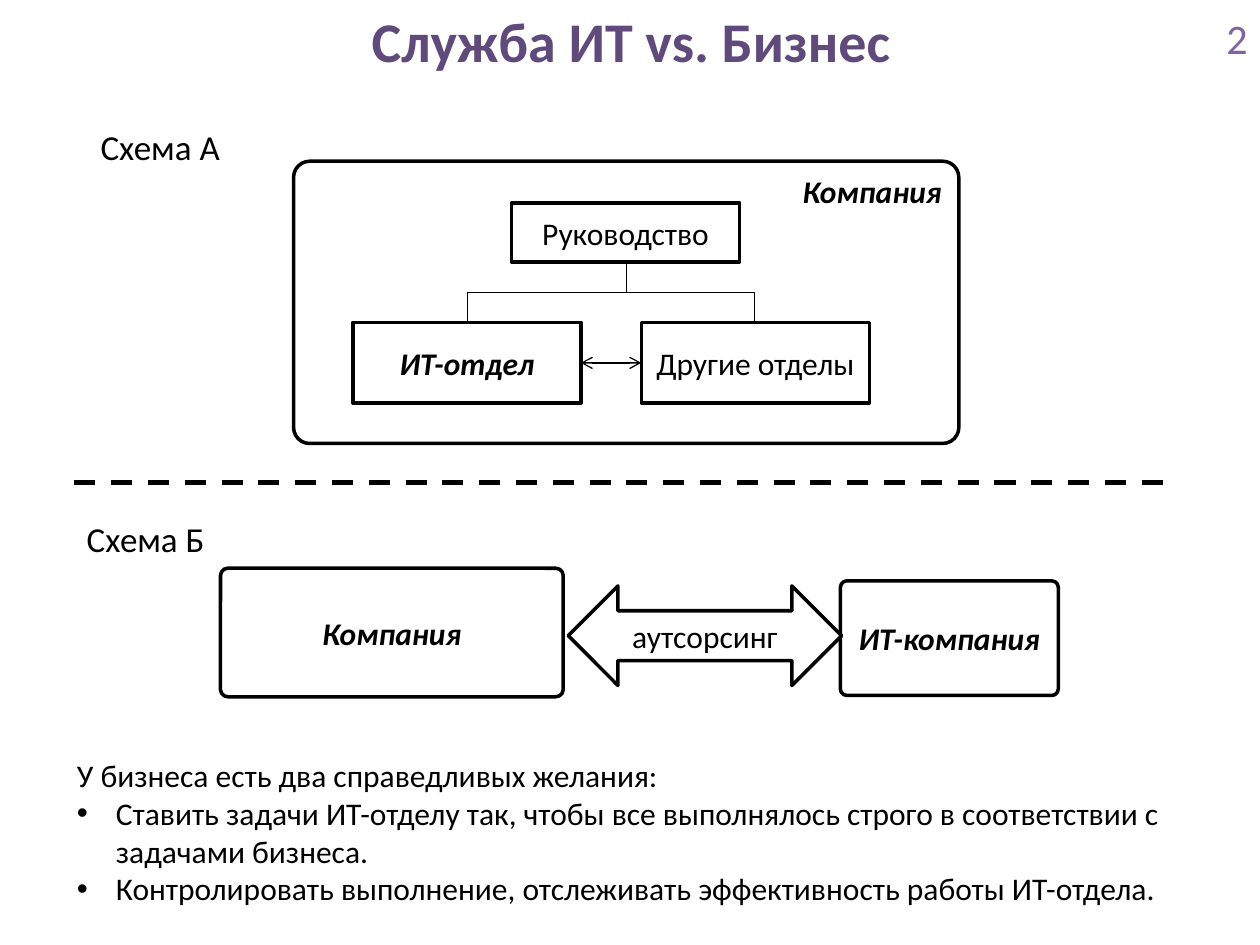
from lxml.etree import SubElement
from pptx import Presentation
from pptx.dml.color import RGBColor
from pptx.enum.dml import MSO_LINE
from pptx.enum.shapes import MSO_CONNECTOR, MSO_SHAPE
from pptx.enum.text import MSO_ANCHOR, MSO_AUTO_SIZE, PP_ALIGN
from pptx.oxml.ns import qn
from pptx.util import Inches, Pt

BLACK, WHITE, PURPLE, LILAC = "000000", "FFFFFF", "604A7B", "8064A2"
STRONG = {"bold": True, "italic": True}
ROUND, RECTANGLE = MSO_SHAPE.ROUNDED_RECTANGLE, MSO_SHAPE.RECTANGLE
MIDDLE, TOP = MSO_ANCHOR.MIDDLE, MSO_ANCHOR.TOP

TITLE = "Служба ИТ vs. Бизнес"
BOXES = [
    ("Компания", ROUND, (2.33, 1.28, 5.28, 2.24), STRONG, PP_ALIGN.RIGHT, TOP),
    ("Руководство", RECTANGLE, (4.06, 1.61, 1.81, 0.47), {}, PP_ALIGN.CENTER, MIDDLE),
    ("ИТ-отдел", RECTANGLE, (2.8, 2.56, 1.81, 0.64), STRONG, PP_ALIGN.CENTER, MIDDLE),
    ("Другие отделы", RECTANGLE, (5.09, 2.56, 1.81, 0.64), {}, PP_ALIGN.CENTER, MIDDLE),
    ("Компания", ROUND, (1.75, 4.51, 2.72, 1.02), STRONG, PP_ALIGN.CENTER, MIDDLE),
    ("ИТ-компания", ROUND, (6.67, 4.61, 1.73, 0.91), STRONG, PP_ALIGN.CENTER, MIDDLE),
    ("аутсорсинг", MSO_SHAPE.LEFT_RIGHT_ARROW, (4.51, 4.65, 2.17, 0.79), {}, PP_ALIGN.CENTER, MIDDLE),
]
MANAGER = (4.97, 2.08)
DEPARTMENTS = [(3.71, 2.56), (5.99, 2.56)]
LABELS = [
    ("Схема А", (0.7, 0.95, 1.16, 0.44), 20, BLACK, PP_ALIGN.LEFT, TOP),
    ("Схема Б", (0.59, 4.06, 1.16, 0.44), 20, BLACK, PP_ALIGN.LEFT, TOP),
    ("2", (9.25, 0, 0.75, 0.6), 24, LILAC, PP_ALIGN.RIGHT, MIDDLE),
]
WISHES = [
    ("У бизнеса есть два справедливых желания:", False),
    ("Ставить задачи ИТ-отделу так, чтобы все выполнялось строго в соответствии с задачами бизнеса.", True),
    ("Контролировать выполнение, отслеживать эффективность работы ИТ-отдела.", True),
]


def rgb(value):
    """Turn a hex string into a colour."""
    return RGBColor.from_string(value)


def place(shape, area):
    """Move and size a shape in inches."""
    for name, value in zip(("left", "top", "width", "height"), area):
        setattr(shape, name, Inches(value))


def write(paragraph, text, size, color=BLACK, align=PP_ALIGN.LEFT, **style):
    """Put one formatted run into a paragraph."""
    paragraph.alignment = align
    run = paragraph.add_run()
    run.text = text
    run.font.color.rgb = rgb(color)
    for name, value in {"name": "Calibri", "size": Pt(size), **style}.items():
        setattr(run.font, name, value)


def set_frame(shape, anchor, wrap=True):
    """Set the anchor and wrapping of a shape's text."""
    frame = shape.text_frame
    settings = {"word_wrap": wrap, "vertical_anchor": anchor, "auto_size": MSO_AUTO_SIZE.NONE}
    for name, value in settings.items():
        setattr(frame, name, value)
    return frame


def add_box(slide, text, kind, area, style, align, anchor):
    """Add an outlined white shape with text."""
    shape = slide.shapes.add_shape(kind, *map(Inches, area))
    shape.shadow.inherit = False
    shape.fill.solid()
    shape.fill.fore_color.rgb = rgb(WHITE)
    shape.line.color.rgb = rgb(BLACK)
    shape.line.width = Pt(2)
    if kind == ROUND:
        shape.adjustments[0] = 0.057
    write(set_frame(shape, anchor).paragraphs[0], text, 18, align=align, **style)


def add_line(slide, start, end, width=0.75, kind=MSO_CONNECTOR.STRAIGHT):
    """Add a black connector without a shadow."""
    connector = slide.shapes.add_connector(kind, *map(Inches, (*start, *end)))
    connector.line.color.rgb = rgb(BLACK)
    connector.line.width = Pt(width)
    SubElement(connector._element.spPr, qn("a:effectLst"))
    return connector


def add_branch(slide, start, end):
    """Add an elbow that leaves downwards, as a turned sideways elbow."""
    center_x, center_y = (start[0] + end[0]) / 2, (start[1] + end[1]) / 2
    side = 1 if end[0] < start[0] else -1
    half_width = side * (end[1] - start[1]) / 2
    half_height = abs(end[0] - start[0]) / 2
    connector = add_line(
        slide,
        (center_x - half_width, center_y - half_height),
        (center_x + half_width, center_y + half_height),
        kind=MSO_CONNECTOR.ELBOW,
    )
    turn = 90 if side == 1 else 270
    connector._element.spPr.find(qn("a:xfrm")).set("rot", str(turn * 60000))


def add_wishes(body):
    """Fill the body placeholder with a lead line and bullets."""
    place(body, (0.51, 5.95, 9.06, 1.31))
    frame = set_frame(body, TOP)
    for index, (text, bulleted) in enumerate(WISHES):
        paragraph = frame.add_paragraph() if index else frame.paragraphs[0]
        write(paragraph, text, 18)
        paragraph.space_before = Pt(0)
        indent = Inches(0.31) if bulleted else 0
        properties = paragraph._p.get_or_add_pPr()
        properties.set("marL", str(indent))
        properties.set("indent", str(-indent))
        if bulleted:
            SubElement(properties, qn("a:buFont"), typeface="Arial")
            SubElement(properties, qn("a:buChar"), char="•")
        else:
            SubElement(properties, qn("a:buNone"))


def main():
    """Build and save the slide."""
    presentation = Presentation()
    presentation.slide_width, presentation.slide_height = Inches(10), Inches(7.5)
    slide = presentation.slides.add_slide(presentation.slide_layouts[1])
    title, body = slide.placeholders
    place(title, (0.51, 0, 9, 0.84))
    write(set_frame(title, TOP).paragraphs[0], TITLE, 32, PURPLE, PP_ALIGN.CENTER, bold=True)
    add_wishes(body)
    for box in BOXES:
        add_box(slide, *box)
    for department in DEPARTMENTS:
        add_branch(slide, MANAGER, department)
    exchange = add_line(slide, (4.61, 2.88), (5.09, 2.88))
    for end in ("a:headEnd", "a:tailEnd"):
        SubElement(exchange.line._get_or_add_ln(), qn(end), type="arrow")
    divider = add_line(slide, (0.59, 3.83), (9.25, 3.83), 3)
    divider.line.dash_style = MSO_LINE.DASH
    for text, area, size, color, align, anchor in LABELS:
        label = slide.shapes.add_textbox(*map(Inches, area))
        write(set_frame(label, anchor, False).paragraphs[0], text, size, color, align)
    presentation.save("out.pptx")


if __name__ == "__main__":
    main()
